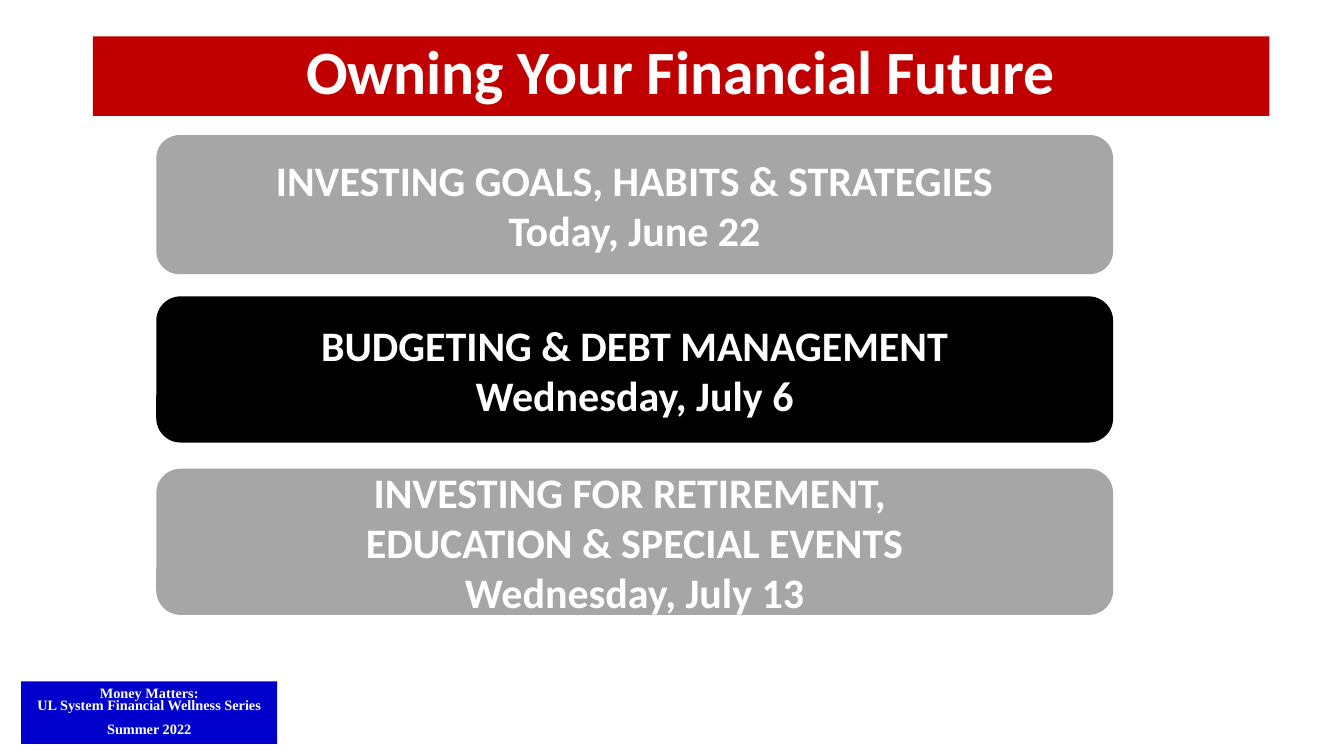
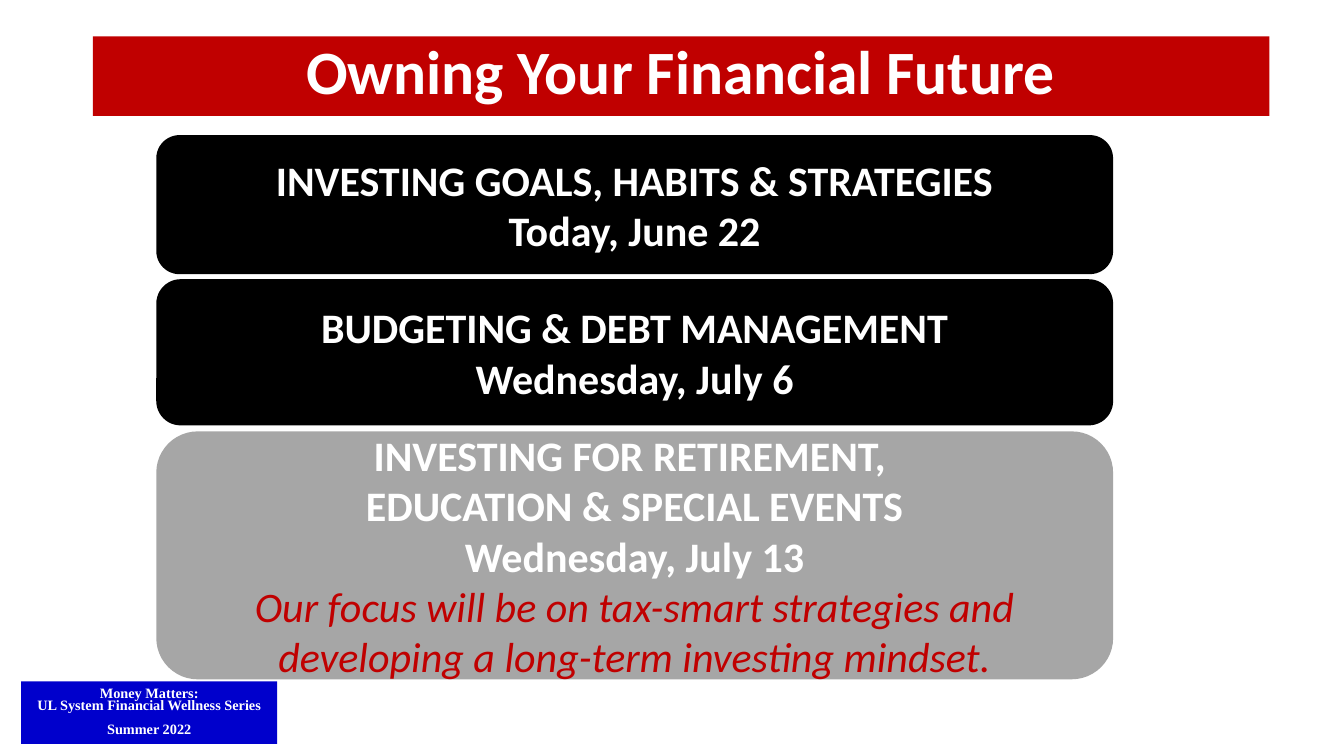
from pptx import Presentation
from pptx.dml.color import RGBColor
from pptx.enum.shapes import MSO_SHAPE as Shape
from pptx.enum.text import MSO_ANCHOR as Anchor, MSO_AUTO_SIZE as AutoSize, PP_ALIGN as Align
from pptx.util import Inches, Pt

COLORS = {
    "white": "FFFFFF",
    "banner": "C00000",
    "badge": "0000CC",
    "active": "000000",
    "muted": "A6A6A6",
}
BANNER_BOX = (0.92, 0.36, 11.67, 0.79)
BADGE_BOX = (0.21, 6.76, 2.54, 0.62)
CARD_LEFT, CARD_WIDTH = 1.55, 9.49

GOALS = ["INVESTING GOALS, HABITS & STRATEGIES", "Today, June 22"]
BUDGETING = ["BUDGETING & DEBT MANAGEMENT", "Wednesday, July 6"]
RETIREMENT = ["INVESTING FOR RETIREMENT, \vEDUCATION & SPECIAL EVENTS", "Wednesday, July 13"]
FOCUS = "Our focus will be on tax-smart strategies and developing a long-term investing mindset."

AGENDAS = [
    [
        (1.34, 1.38, "muted", GOALS, None),
        (2.94, 1.45, "active", BUDGETING, None),
        (4.65, 1.45, "muted", RETIREMENT, None),
    ],
    [
        (1.34, 1.38, "active", GOALS, None),
        (2.77, 1.45, "active", BUDGETING, None),
        (4.28, 2.46, "muted", RETIREMENT, FOCUS),
    ],
]


def color(name):
    return RGBColor.from_string(COLORS[name])


def fill_shape(shape, name):
    shape.fill.solid()
    shape.fill.fore_color.rgb = color(name)


def add_panel(slide, kind, box, fill):
    panel = slide.shapes.add_shape(kind, *map(Inches, box))
    panel.shadow.inherit = False
    fill_shape(panel, fill)
    panel.line.fill.background()
    panel.text_frame.word_wrap = True
    panel.text_frame.vertical_anchor = Anchor.MIDDLE
    return panel


def write_lines(frame, lines, size, font_name="Calibri", spacing=1.0):
    for index, line in enumerate(lines):
        paragraph = frame.add_paragraph() if index else frame.paragraphs[0]
        paragraph.text = line
        paragraph.alignment = Align.CENTER
        paragraph.line_spacing = spacing
        font = paragraph.font
        font.name, font.size, font.bold = font_name, Pt(size), True
        font.color.rgb = color("white")


def add_badge(slide, box):
    badge = add_panel(slide, Shape.RECTANGLE, box, "badge")
    lines = ["Money Matters:", "UL System Financial Wellness Series", "Summer 2022"]
    write_lines(badge.text_frame, lines, 10.2, "Times New Roman", 0.7)
    badge.text_frame.paragraphs[-1].space_before = Pt(8.5)


def place_title(slide, box):
    title = slide.shapes.title
    title.left, title.top, title.width, title.height = map(Inches, box)
    fill_shape(title, "banner")
    frame = title.text_frame
    frame.auto_size = AutoSize.NONE
    frame.word_wrap = True
    frame.vertical_anchor = Anchor.TOP
    write_lines(frame, ["Owning Your Financial Future"], 44, spacing=0.9)


def add_session_card(slide, box, fill, lines, focus):
    card = add_panel(slide, Shape.ROUNDED_RECTANGLE, box, fill)
    write_lines(card.text_frame, lines + ([focus] if focus else []), 30)
    if focus:
        font = card.text_frame.paragraphs[-1].font
        font.bold, font.italic = False, True
        font.color.rgb = color("banner")


def add_agenda_slide(presentation, layout, sessions):
    slide = presentation.slides.add_slide(layout)
    add_badge(slide, BADGE_BOX)
    place_title(slide, BANNER_BOX)
    for top, height, fill, lines, focus in sessions:
        add_session_card(slide, (CARD_LEFT, top, CARD_WIDTH, height), fill, lines, focus)


def main():
    presentation = Presentation()
    presentation.slide_width, presentation.slide_height = Inches(13.33), Inches(7.5)
    layout = presentation.slide_layouts.get_by_name("Title Only")
    for sessions in AGENDAS:
        add_agenda_slide(presentation, layout, sessions)
    presentation.save("out.pptx")


if __name__ == "__main__":
    main()
